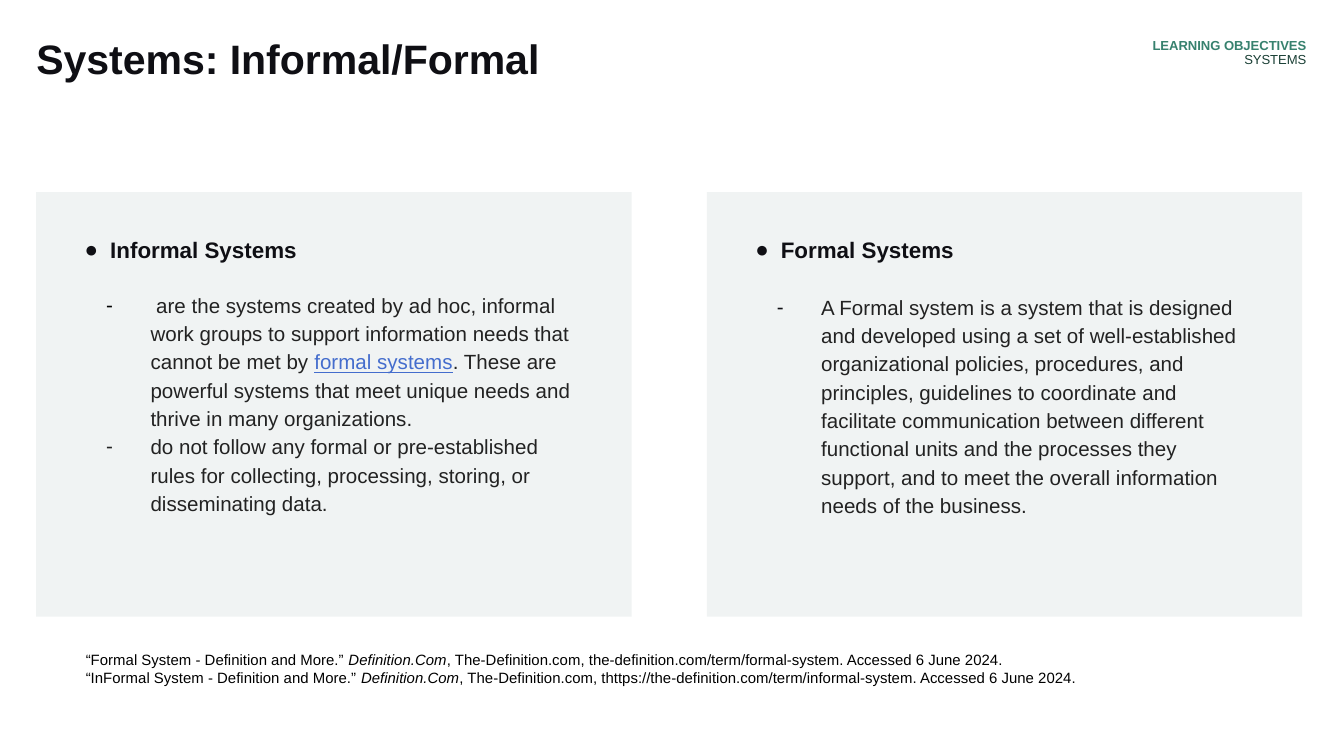
from copy import deepcopy

from lxml import etree
from pptx import Presentation
from pptx.dml.color import RGBColor
from pptx.enum.shapes import MSO_SHAPE
from pptx.enum.text import MSO_ANCHOR, MSO_AUTO_SIZE, PP_ALIGN
from pptx.oxml.ns import qn
from pptx.util import Inches, Pt

COLORS = {
    "panel": "F0F3F3",
    "heading": "0F0F14",
    "body": "222222",
    "black": "000000",
    "link": "446DCD",
    "green": "37816E",
    "dark_green": "1B4036",
}
PLAIN = {}
ITALIC = {"italic": True}
LINK = {"ink": "link", "underline": True}


def color(name):
    return RGBColor.from_string(COLORS[name])


def place(shape, box, insets):
    shape.left, shape.top, shape.width, shape.height = map(Inches, box)
    frame = shape.text_frame
    frame.word_wrap = True
    frame.auto_size = MSO_AUTO_SIZE.NONE
    frame.vertical_anchor = MSO_ANCHOR.TOP
    (frame.margin_left, frame.margin_top,
     frame.margin_right, frame.margin_bottom) = map(Inches, insets)
    return frame


def add_break(paragraph):
    paragraph.add_line_break()
    line_break = paragraph._p.findall(qn("a:br"))[-1]
    line_break.append(deepcopy(paragraph.runs[-1].font._element))


def write(frame, runs, size, ink, bold=False, align=PP_ALIGN.LEFT, spacing=1.0,
          before=0, margin=0, indent=0, bullet=None, bullet_ink="heading"):
    paragraph = frame.paragraphs[0]
    if paragraph.runs:
        paragraph = frame.add_paragraph()
    properties = paragraph._p.get_or_add_pPr()
    properties.set("marL", str(Inches(margin)))
    properties.set("indent", str(Inches(indent)))
    if bullet:
        bullet_color = etree.SubElement(properties, qn("a:buClr"))
        etree.SubElement(bullet_color, qn("a:srgbClr"), val=COLORS[bullet_ink])
        etree.SubElement(properties, qn("a:buFont"), typeface="Arial")
        etree.SubElement(properties, qn("a:buChar"), char=bullet)
    paragraph.alignment = align
    paragraph.line_spacing = spacing
    paragraph.space_before = Pt(before)
    paragraph.space_after = Pt(0)
    for text, style in runs:
        if style.get("new_line"):
            add_break(paragraph)
        run = paragraph.add_run()
        run.text = text
        font = run.font
        font.name, font.size = "Arial", Pt(size)
        font.bold = style.get("bold", bold)
        font.italic = style.get("italic", False)
        font.underline = style.get("underline", False)
        font.color.rgb = color(style.get("ink", ink))


def add_title(slide, box):
    frame = place(slide.shapes.title, box, (0, 0, 0.1, 0.1))
    write(frame, [("Systems: Informal/Formal", PLAIN)], 22, "heading",
          bold=True, spacing=0.9)


def add_section_label(slide, box):
    frame = place(slide.shapes.add_textbox(0, 0, 0, 0), box, (0, 0, 0, 0.1))
    write(frame, [
        ("LEARNING OBJECTIVES", {"ink": "green", "bold": True}),
        ("SYSTEMS", {"new_line": True}),
    ], 7, "dark_green", align=PP_ALIGN.RIGHT, spacing=0.9)


def add_system(slide, definition, box, text_width, heading, points, gap):
    left, top, width, height = box
    panel = slide.shapes.add_shape(MSO_SHAPE.RECTANGLE, *map(Inches, box))
    panel.shadow.inherit = False
    panel.fill.solid()
    panel.fill.fore_color.rgb = color("panel")
    panel.line.fill.background()
    slide.shapes.element.insert(2, panel.element)

    frame = place(definition, (left + 0.35, top + 0.23, text_width, height - 0.6),
                  (0, 0.1, 0.1, 0.1))
    write(frame, [(heading, PLAIN)], 12, "heading", bold=True,
          margin=0.2, indent=-0.19, bullet="●")
    for number, (runs, dash_ink) in enumerate(points):
        write(frame, runs, 11, "body", spacing=1.15,
              before=0 if number else gap, margin=0.5, indent=-0.33,
              bullet="-", bullet_ink=dash_ink)


def add_citations(slide, box):
    frame = place(slide.shapes.add_textbox(0, 0, 0, 0), box, (0.1,) * 4)
    for entry, address in (
        ("Formal System", "the-definition.com/term/formal-system"),
        ("InFormal System", "thttps://the-definition.com/term/informal-system"),
    ):
        write(frame, [
            (f"“{entry} - Definition and More.” ", PLAIN),
            ("Definition.Com", ITALIC),
            (f", The-Definition.com, {address}. Accessed 6 June 2024.", PLAIN),
        ], 8, "black", margin=0.39, indent=-0.01)


INFORMAL = [
    ([(" are the systems created by ad hoc, informal work groups to support "
       "information needs that cannot be met by ", PLAIN),
      ("formal systems", LINK),
      (". These are powerful systems that meet unique needs and thrive in many "
       "organizations.", PLAIN)], "black"),
    ([("do not follow any formal or pre-established rules for collecting, "
       "processing, storing, or disseminating data.", PLAIN)], "body"),
]
FORMAL = [
    ([("A Formal system is a system that is designed and developed using a set of "
       "well-established organizational policies, procedures, and principles, "
       "guidelines to coordinate and facilitate communication between different "
       "functional units and the processes they support, and to meet the overall "
       "information needs of the business.", PLAIN)], "heading"),
]


def main():
    deck = Presentation()
    deck.slide_width = Inches(10)
    deck.slide_height = deck.slide_width * 9 // 16
    slide = deck.slides.add_slide(deck.slide_layouts[3])
    informal, formal = slide.placeholders[1], slide.placeholders[2]

    add_title(slide, (0.27, 0.29, 7.99, 0.59))
    add_system(slide, informal, (0.27, 1.43, 4.43, 3.16), 3.8,
               "Informal Systems", INFORMAL, gap=13.8)
    add_system(slide, formal, (5.26, 1.43, 4.43, 3.16), 3.72,
               "Formal Systems", FORMAL, gap=14.8)
    add_section_label(slide, (6.65, 0.29, 3.07, 0.36))
    add_citations(slide, (0.16, 4.74, 8.97, 0.59))
    deck.save("out.pptx")


if __name__ == "__main__":
    main()
